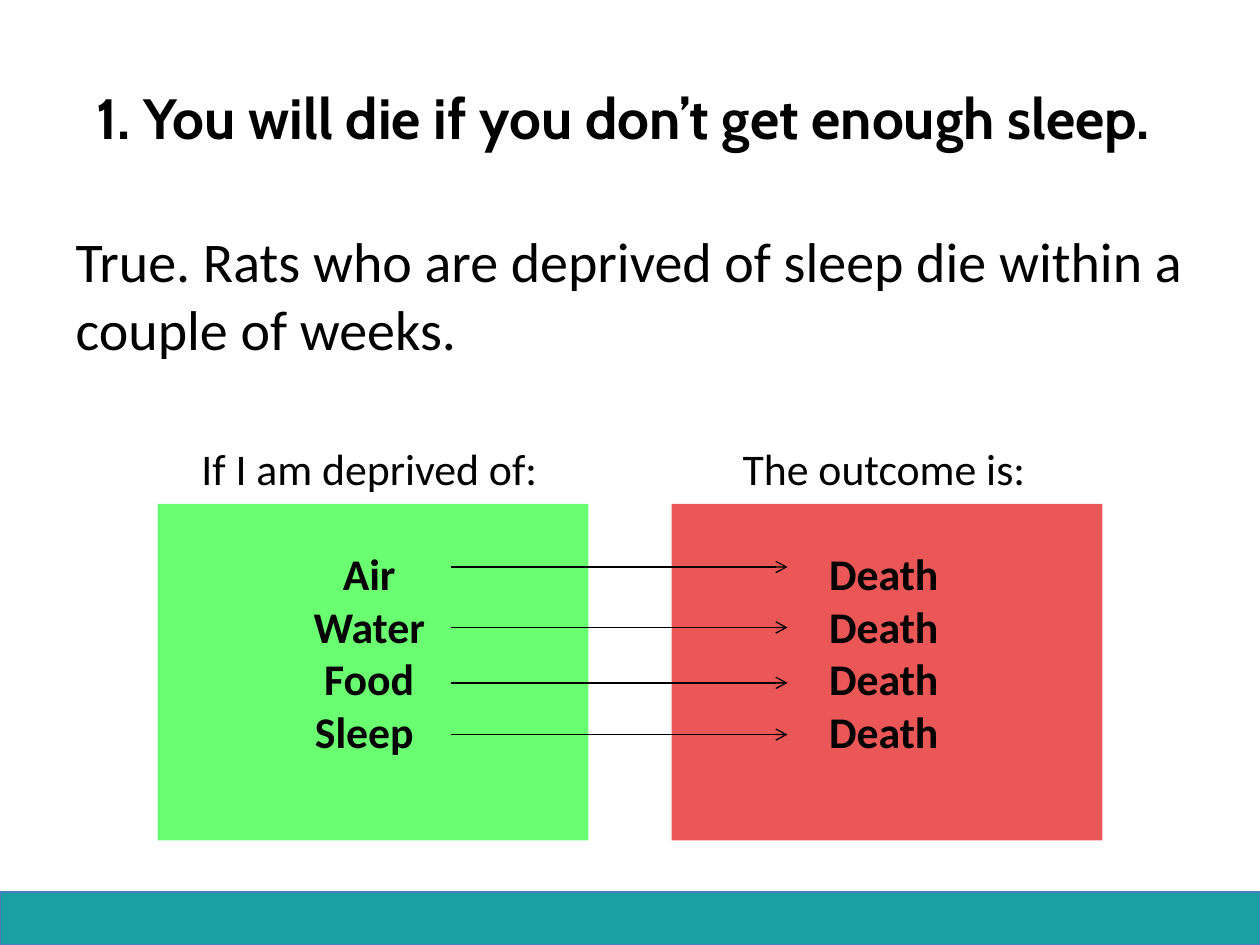
"""Build the slide on sleep deprivation with its cause-and-outcome diagram."""
from dataclasses import dataclass

from lxml import etree
from pptx import Presentation
from pptx.dml.color import RGBColor
from pptx.enum.shapes import MSO_CONNECTOR, MSO_SHAPE
from pptx.enum.text import MSO_ANCHOR, MSO_AUTO_SIZE, PP_ALIGN
from pptx.oxml.ns import qn
from pptx.util import Inches, Pt

RECTANGLE = MSO_SHAPE.RECTANGLE
STRAIGHT = MSO_CONNECTOR.STRAIGHT
CENTER, LEFT = PP_ALIGN.CENTER, PP_ALIGN.LEFT
TOP, MIDDLE = MSO_ANCHOR.TOP, MSO_ANCHOR.MIDDLE
FIT_SHAPE = MSO_AUTO_SIZE.SHAPE_TO_FIT_TEXT
BLACK = "000000"
PANEL_TOP, PANEL_WIDTH, PANEL_HEIGHT = 4, 3.42, 2.67
LIST_TOP, LIST_HEIGHT = 3.46, 2.63
ARROW_START, ARROW_END = 3.58, 6.25
ARROW_HEIGHTS = (4.5, 4.98, 5.42, 5.83)


@dataclass
class Panel:
    """A coloured panel with a heading above it and a list of words."""
    left: float
    fill: str
    list_left: float
    list_width: float
    heading: str
    heading_align: PP_ALIGN
    words: tuple[str, ...]


PANELS = (
    Panel(1.25, "6AFE71", 1.5, 2.89, "If I am deprived of:", LEFT,
          ("Air", "Water", "Food", "Sleep ")),
    Panel(5.33, "EB5757", 5.78, 2.47, "The outcome is:", CENTER, ("Death",) * 4),
)


def color(hex_value: str) -> RGBColor:
    """Turn a hex string into a colour."""
    return RGBColor.from_string(hex_value)


def format_text(paragraph, size: float, font: str = "Calibri", bold: bool = False) -> None:
    """Style every run of a paragraph."""
    for run in paragraph.runs:
        run.font.name = font
        run.font.size = Pt(size)
        run.font.bold = bold
        run.font.color.rgb = color(BLACK)


def place(shape, left: float, top: float, width: float, height: float) -> None:
    """Move and size a shape."""
    shape.left, shape.top = Inches(left), Inches(top)
    shape.width, shape.height = Inches(width), Inches(height)


def add_rectangle(slide, left: float, top: float, width: float, height: float, fill: str):
    """Add a filled rectangle without outline or shadow."""
    rectangle = slide.shapes.add_shape(
        RECTANGLE, Inches(left), Inches(top), Inches(width), Inches(height))
    rectangle.shadow.inherit = False
    rectangle.fill.solid()
    rectangle.fill.fore_color.rgb = color(fill)
    rectangle.line.fill.background()
    return rectangle


def add_word_list(slide, panel: Panel) -> None:
    """Write the heading and the words of a panel."""
    word_list = slide.shapes.add_textbox(
        Inches(panel.list_left), Inches(LIST_TOP), Inches(panel.list_width), Inches(LIST_HEIGHT))
    frame = word_list.text_frame
    frame.word_wrap = False
    frame.auto_size = FIT_SHAPE
    frame.text = "\n".join((panel.heading, *panel.words))
    heading, *words = frame.paragraphs
    heading.alignment = panel.heading_align
    heading.space_after = Pt(30)
    format_text(heading, 25)
    for word in words:
        word.alignment = CENTER
        format_text(word, 25, bold=True)


def add_arrow(slide, height: float) -> None:
    """Draw a level arrow from a cause to its outcome."""
    arrow = slide.shapes.add_connector(
        STRAIGHT, Inches(ARROW_START), Inches(height), Inches(ARROW_END), Inches(height))
    arrow.line.color.rgb = color(BLACK)
    arrow.line.width = Pt(0.75)
    etree.SubElement(arrow.line._get_or_add_ln(), qn("a:tailEnd"), type="arrow")
    etree.SubElement(arrow._element.spPr, qn("a:effectLst"))


def write_title(title) -> None:
    """Fill the title placeholder."""
    place(title, 0, 0.3, 10, 1.25)
    title.text_frame.text = "1. You will die if you don’t get enough sleep. "
    title.text_frame.vertical_anchor = MIDDLE
    statement = title.text_frame.paragraphs[0]
    statement.alignment = CENTER
    format_text(statement, 32.4, "Cabin", bold=True)


def write_body(body) -> None:
    """Fill the body placeholder with unbulleted text."""
    place(body, 0.5, 1.75, 9, 4.95)
    body.text_frame.text = "True. Rats who are deprived of sleep die within a couple of weeks."
    body.text_frame.vertical_anchor = TOP
    answer = body.text_frame.paragraphs[0]
    format_text(answer, 32)
    properties = answer._p.get_or_add_pPr()
    properties.set("marL", "0")
    properties.set("indent", "0")
    etree.SubElement(properties, qn("a:buNone"))


def main() -> None:
    """Build and save the slide."""
    presentation = Presentation()
    presentation.slide_width, presentation.slide_height = Inches(10), Inches(7.5)
    slide = presentation.slides.add_slide(presentation.slide_layouts[1])
    write_title(slide.shapes.title)
    write_body(slide.placeholders[1])

    footer_band = add_rectangle(slide, 0, 7.08, 10, 0.42, "1C9FA3")
    footer_band.line.color.rgb = color("4B7EBC")
    footer_band.line.width = Pt(0.75)

    for panel in PANELS:
        add_rectangle(slide, panel.left, PANEL_TOP, PANEL_WIDTH, PANEL_HEIGHT, panel.fill)
    for panel in PANELS:
        add_word_list(slide, panel)
    for height in ARROW_HEIGHTS:
        add_arrow(slide, height)
    presentation.save("out.pptx")


if __name__ == "__main__":
    main()
